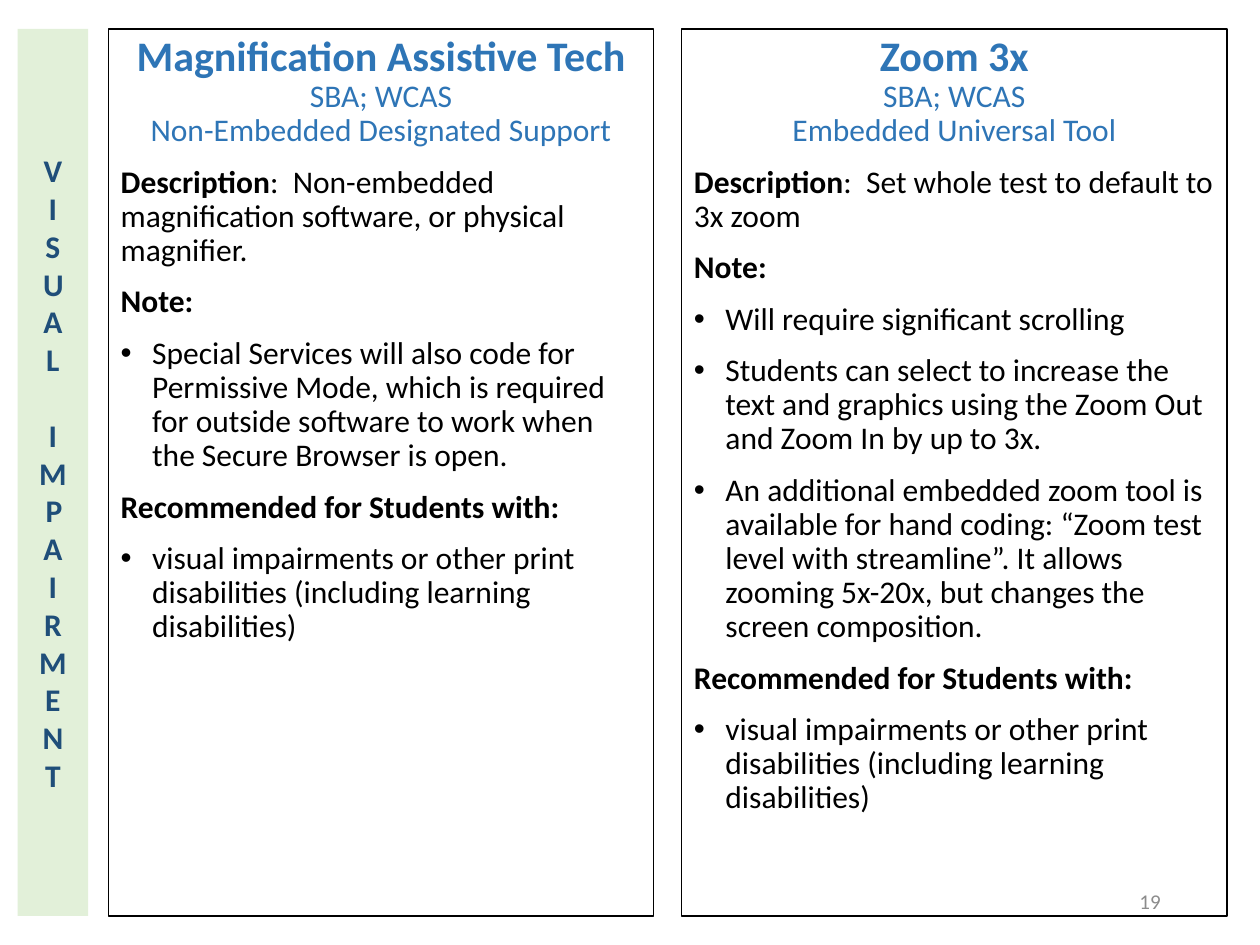
from dataclasses import dataclass

from lxml import etree
from pptx import Presentation
from pptx import util as u
from pptx.dml.color import RGBColor
from pptx.enum import shapes, text
from pptx.oxml.ns import qn


@dataclass(frozen=True)
class Theme:
    font: str = "Calibri"
    heading: str = "2E75B6"
    body: str = "000000"
    band: str = "E2F0D9"
    band_text: str = "1F4E79"
    muted: str = "8C8C8C"
    title_size: int = 24
    body_size: int = 18
    number_size: int = 12
    border: float = 0.75


THEME = Theme()
ALIGN = text.PP_ALIGN
ANCHOR = text.MSO_ANCHOR

# Page grid, in inches
TOP, HEIGHT = 0.23, 7.04
BAND_LEFT, BAND_WIDTH = 0.14, 0.56
CARD_LEFT, CARD_WIDTH, CARD_STEP = 0.86, 4.33, 4.55
BULLET_INDENT = 0.25

AUDIENCE = "visual impairments or other print disabilities (including learning disabilities)"
CARDS = [
    {
        "title": "Magnification Assistive Tech",
        "subtitles": ["SBA; WCAS", "Non-Embedded Designated Support"],
        "description": "Non-embedded magnification software, or physical magnifier.",
        "notes": [
            "Special Services will also code for Permissive Mode, which is required "
            "for outside software to work when the Secure Browser is open.",
        ],
    },
    {
        "title": "Zoom 3x",
        "subtitles": ["SBA; WCAS", "Embedded Universal Tool"],
        "description": "Set whole test to default to 3x zoom",
        "notes": [
            "Will require significant scrolling",
            "Students can select to increase the text and graphics using the "
            "Zoom Out and Zoom In by up to 3x.",
            "An additional embedded zoom tool is available for hand coding: "
            "“Zoom test level with streamline”. It allows zooming 5x-20x, "
            "but changes the screen composition.",
        ],
    },
]


def apply_format(target, values):
    for name, value in values.items():
        setattr(target, name, value)


def add_span(para, words, size, color, bold=False):
    span = para.add_run()
    span.text = words
    apply_format(span.font, {"name": THEME.font, "size": u.Pt(size), "bold": bold})
    span.font.color.rgb = RGBColor.from_string(color)


def next_para(frame, **values):
    """Use the empty first paragraph, then add new ones."""
    first = frame.paragraphs[0]
    para = frame.add_paragraph() if first.runs else first
    apply_format(para, values)
    return para


def set_bullet(para):
    props = para._p.get_or_add_pPr()
    props.set("marL", str(u.Inches(BULLET_INDENT)))
    props.set("indent", str(-u.Inches(BULLET_INDENT)))
    etree.SubElement(props, qn("a:buFont")).set("typeface", "Arial")
    etree.SubElement(props, qn("a:buChar")).set("char", "•")


def add_panel(page, box, fill=None, line=None):
    panel = page.shapes.add_shape(shapes.MSO_SHAPE.RECTANGLE, *map(u.Inches, box))
    panel.shadow.inherit = False
    if fill:
        panel.fill.solid()
        panel.fill.fore_color.rgb = RGBColor.from_string(fill)
    else:
        panel.fill.background()
    if line:
        panel.line.color.rgb = RGBColor.from_string(line)
        panel.line.width = u.Pt(THEME.border)
    else:
        panel.line.fill.background()
    apply_format(panel.text_frame, {"word_wrap": True, "vertical_anchor": ANCHOR.TOP})
    return panel.text_frame


def add_card(page, box, card):
    frame = add_panel(page, box, line=THEME.body)
    centred = {"alignment": ALIGN.CENTER, "line_spacing": 0.9}
    spaced = {"alignment": ALIGN.LEFT, "line_spacing": 0.9, "space_before": u.Pt(10)}

    # Heading
    para = next_para(frame, **centred, space_before=u.Pt(10))
    add_span(para, card["title"], THEME.title_size, THEME.heading, True)
    for subtitle in card["subtitles"]:
        para = next_para(frame, **centred, space_before=u.Pt(0))
        add_span(para, subtitle, THEME.body_size, THEME.heading)

    # Description
    para = next_para(frame, **spaced)
    add_span(para, "Description", THEME.body_size, THEME.body, True)
    add_span(para, ":  " + card["description"], THEME.body_size, THEME.body)

    # Bulleted sections
    sections = {"Note:": card["notes"], "Recommended for Students with:": [AUDIENCE]}
    for label, items in sections.items():
        add_span(next_para(frame, **spaced), label, THEME.body_size, THEME.body, True)
        for item in items:
            para = next_para(frame, **spaced)
            set_bullet(para)
            add_span(para, item, THEME.body_size, THEME.body)


def add_category_band(page, box, label):
    frame = add_panel(page, box, fill=THEME.band)
    frame.auto_size = text.MSO_AUTO_SIZE.SHAPE_TO_FIT_TEXT
    frame._txBody.bodyPr.set("vert", "wordArtVert")
    para = next_para(frame, alignment=ALIGN.CENTER)
    add_span(para, label, THEME.body_size, THEME.band_text, True)


def add_page_number(page, box, number):
    frame = page.shapes.add_textbox(*map(u.Inches, box)).text_frame
    apply_format(frame, {"word_wrap": True, "vertical_anchor": ANCHOR.MIDDLE})
    para = next_para(frame, alignment=ALIGN.RIGHT)
    add_span(para, number, THEME.number_size, THEME.muted)


def main():
    deck = Presentation()
    apply_format(deck, {"slide_width": u.Inches(10), "slide_height": u.Inches(7.5)})
    page = deck.slides.add_slide(deck.slide_layouts[6])

    add_category_band(page, (BAND_LEFT, TOP, BAND_WIDTH, HEIGHT), "VISUAL IMPAIRMENT")
    for column, card in enumerate(CARDS):
        left = CARD_LEFT + column * CARD_STEP
        add_card(page, (left, TOP, CARD_WIDTH, HEIGHT), card)
    add_page_number(page, (7.06, 6.95, 2.25, 0.4), "19")

    deck.save("out.pptx")


if __name__ == "__main__":
    main()
